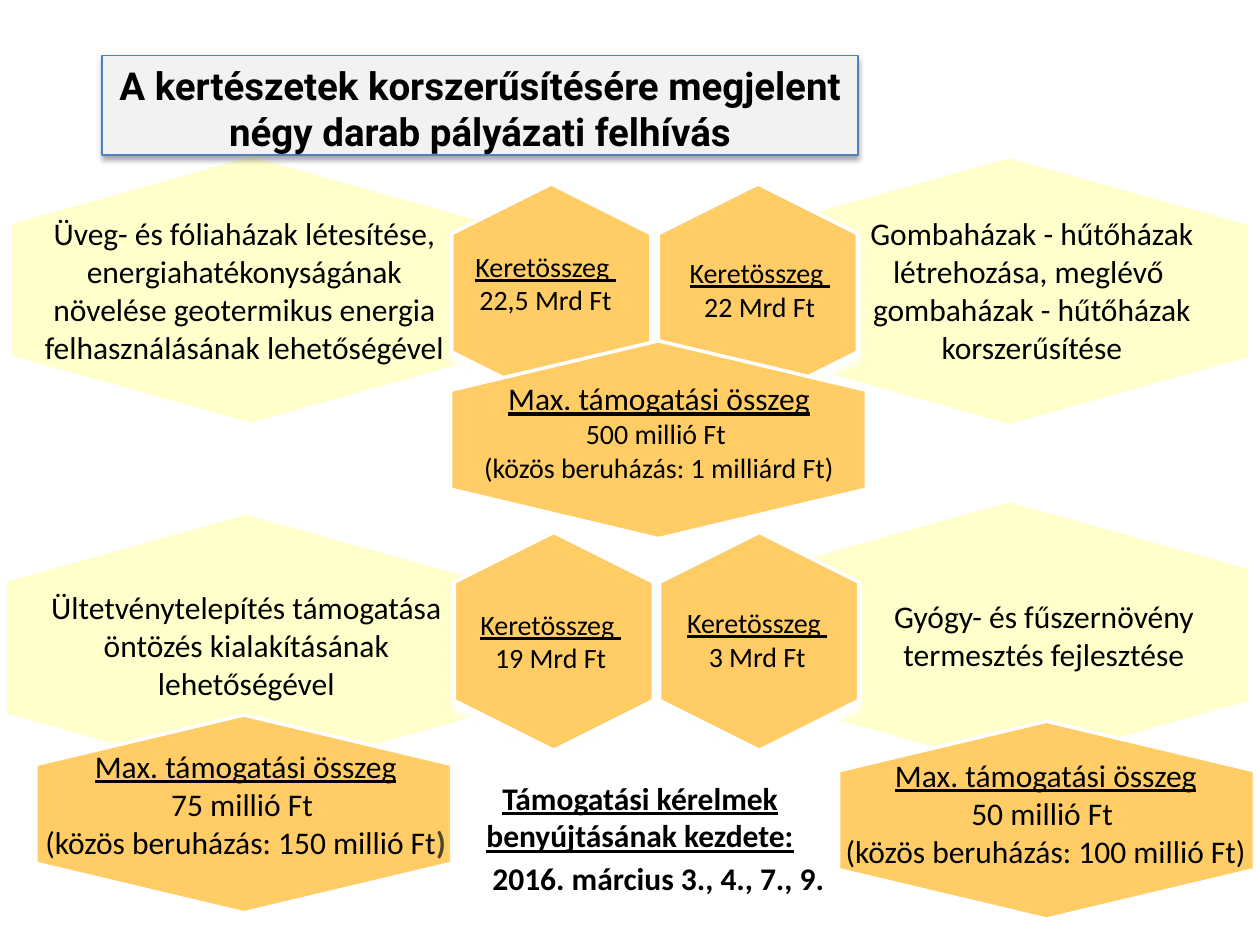
import pptx
import pptx.util
import pptx.dml.color
import pptx.enum.shapes
import pptx.enum.text
import pptx.oxml
import pptx.oxml.ns

RGB = pptx.dml.color.RGBColor.from_string
MSO = pptx.enum.shapes.MSO_SHAPE
ALIGN = pptx.enum.text.PP_ALIGN
THEME = {
    "topic": "FFFFCC", "amount": "FFCC66", "edge": "FFFFFF", "text": "000000",
    "title_fill": "F2F2F2", "title_edge": "4F81BD", "bracket": "4A452A",
    "font": "Calibri", "title_font": "Roboto",
    "title": 22, "body": 18, "small": 16,
}

prs = pptx.Presentation()
prs.slide_width = pptx.util.Inches(10)
prs.slide_height = pptx.util.Inches(7.5)
s = prs.slides.add_slide(prs.slide_layouts[6])
U = prs.slide_width / 100  # grid of 100 columns by 75 rows


def style(sp, fill, edge, width, shadow):
    """Fill, outline and a shadow pointing down: colour, alpha %, blur, distance."""
    sp.fill.solid()
    sp.fill.fore_color.rgb = RGB(fill)
    sp.line.color.rgb = RGB(edge)
    sp.line.width = pptx.util.Pt(width)
    sp.shadow.inherit = False
    color, alpha, blur, dist = shadow
    effects = sp._element.spPr.find(pptx.oxml.ns.qn("a:effectLst"))
    effects.append(pptx.oxml.parse_xml(
        f'<a:outerShdw {pptx.oxml.ns.nsdecls("a")} blurRad="{pptx.util.Pt(blur)}" '
        f'dist="{pptx.util.Pt(dist)}" dir="5400000" rotWithShape="0">'
        f'<a:srgbClr val="{color}"><a:alpha val="{alpha * 1000}"/></a:srgbClr>'
        f'</a:outerShdw>'))


def write(tf, lines, font, align=ALIGN.CENTER):
    """One paragraph per line: text, size, underline, bold."""
    for i, (text, size, underline, bold) in enumerate(lines):
        p = tf.add_paragraph() if i else tf.paragraphs[0]
        p.alignment = align
        p.add_run().text = text
        p.font.name, p.font.size = font, pptx.util.Pt(THEME[size])
        p.font.underline, p.font.bold = underline, bold
        p.font.color.rgb = RGB(THEME["text"])


# Hexagons standing on a point: size before the quarter turn, and fill
KINDS = {
    "topic": (21.4, 38.2, "topic"),
    "budget": (17.3, 15.8, "amount"),
    "maximum": (15.7, 33, "amount"),
}
# Kind and centre, from back to front
HEXAGONS = [
    ("topic", 80.1, 23.1), ("budget", 60.15, 23.25),
    ("topic", 19.9, 23), ("budget", 43.75, 23.25),
    ("topic", 19.5, 51.4), ("topic", 80.1, 50.4),
    ("maximum", 52.25, 34.9),
    ("budget", 43.95, 50.9), ("budget", 60.25, 50.9),
    ("maximum", 83.05, 65.1), ("maximum", 19.35, 64.6),
]
for kind, cx, cy in HEXAGONS:
    w, h, fill = KINDS[kind]
    sp = s.shapes.add_shape(MSO.HEXAGON, int((cx - w / 2) * U), int((cy - h / 2) * U),
                            int(w * U), int(h * U))
    sp.rotation = 90
    style(sp, THEME[fill], THEME["edge"], 2, (THEME["edge"], 100, 4, 4))

# Title
sp = s.shapes.add_shape(MSO.RECTANGLE, *(int(v * U) for v in (8.1, 4.4, 60, 7.9)))
style(sp, THEME["title_fill"], THEME["title_edge"], 0.75, (THEME["text"], 35, 3.1, 1.8))
sp.text_frame.word_wrap = True
sp.text_frame.vertical_anchor = pptx.enum.text.MSO_ANCHOR.TOP
write(sp.text_frame,
      [("A kertészetek korszerűsítésére megjelent négy darab pályázati felhívás",
        "title", False, True)], THEME["title_font"])

# Labels: box, wrap, alignment, lines
labels = [
    ((1.4, 16.5, 36, 13.1), True, ALIGN.CENTER,
     [("Üveg- és fóliaházak létesítése, energiahatékonyságának növelése "
       "geotermikus energia felhasználásának lehetőségével", "body", False, False)]),
    ((64.2, 16.5, 35.4, 13.1), True, ALIGN.CENTER,
     [("Gombaházak - hűtőházak létrehozása, meglévő ", "body", False, False),
      ("gombaházak - hűtőházak korszerűsítése", "body", False, False)]),
    ((1, 46.2, 37.1, 10.1), True, ALIGN.CENTER,
     [("Ültetvénytelepítés támogatása öntözés kialakításának lehetőségével",
       "body", False, False)]),
    ((67.3, 46.9, 31.1, 7.1), True, ALIGN.CENTER,
     [("Gyógy- és fűszernövény termesztés fejlesztése", "body", False, False)]),
    ((37.4, 61.3, 26.8, 7.1), True, ALIGN.CENTER,
     [("Támogatási kérelmek benyújtásának kezdete:", "body", True, True)]),
    ((38.1, 67.7, 28.6, 4), False, ALIGN.LEFT,
     [("2016. március 3., 4., 7., 9.", "body", False, True)]),
]
for x, y, amount in [(35.8, 19.3, "22,5"), (52.8, 19.8, "22"),
                     (36.2, 47.7, "19"), (52.6, 47.6, "3")]:
    labels.append(((x, y, 15, 6.4), True, ALIGN.CENTER,
                   [("Keretösszeg ", "small", True, False),
                    (f"{amount} Mrd Ft", "small", False, False)]))
for box, wrap, size, amount, joint in [
        ((35, 29.6, 34.6, 9.4), True, "small", "500 millió", "1 milliárd Ft)"),
        ((65.6, 59.5, 34.8, 10.1), False, "body", "50 millió", "100 millió Ft)"),
        ((2.1, 58.8, 34.8, 10.1), False, "body", "75 millió", "150 millió Ft")]:
    labels.append((box, wrap, ALIGN.CENTER,
                   [("Max. támogatási összeg", "body", True, False),
                    (f"{amount} Ft ", size, False, False),
                    (f"(közös beruházás: {joint}", size, False, False)]))

for box, wrap, align, lines in labels:
    tf = s.shapes.add_textbox(*(int(v * U) for v in box)).text_frame
    tf.word_wrap = wrap
    tf.auto_size = pptx.enum.text.MSO_AUTO_SIZE.SHAPE_TO_FIT_TEXT
    write(tf, lines, THEME["font"], align)

# Closing bracket of the last label has its own colour
r = tf.paragraphs[-1].add_run()
r.text = ")"
r.font.bold = True
r.font.color.rgb = RGB(THEME["bracket"])

prs.save("out.pptx")
